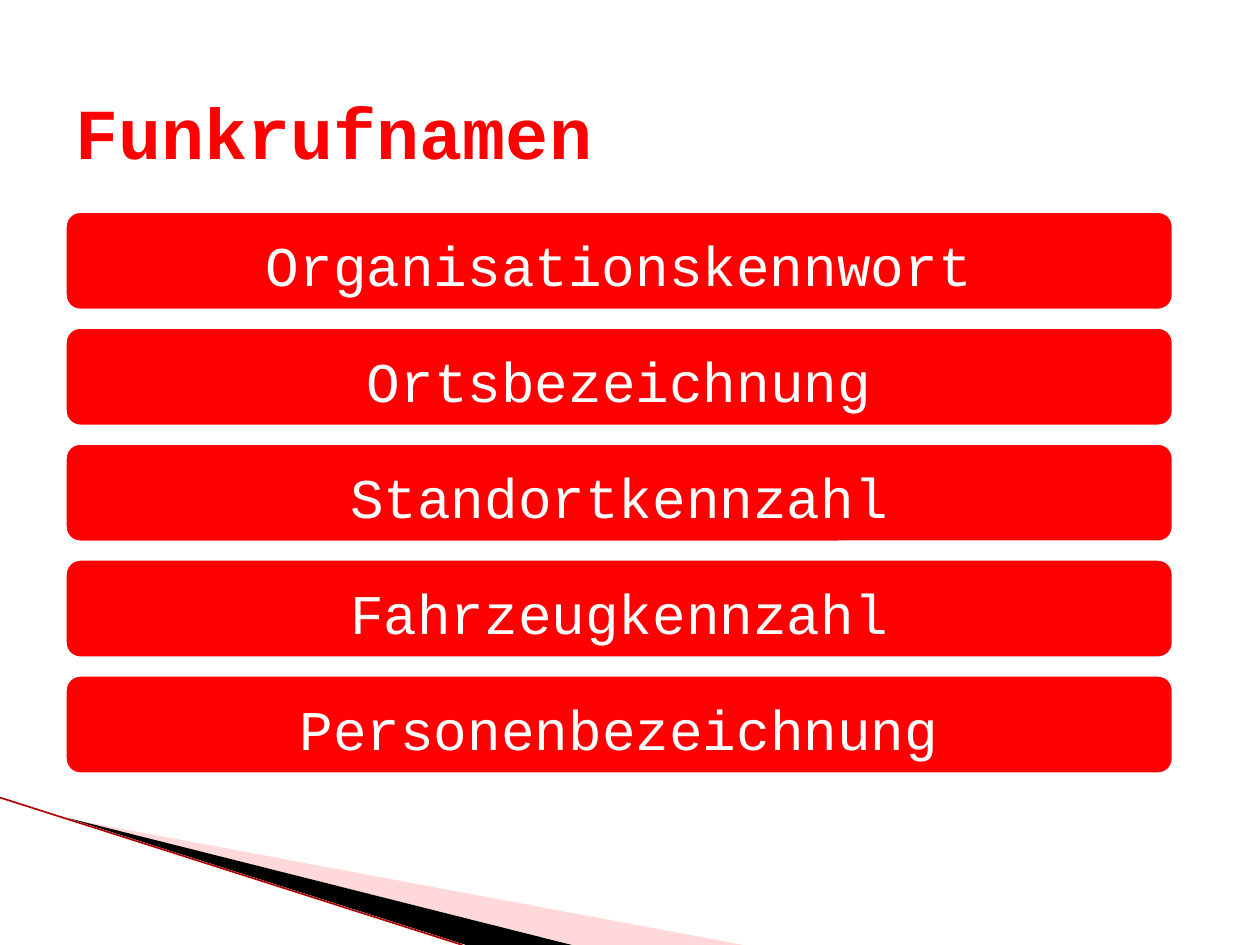
from lxml import etree
from pptx import Presentation
from pptx.dml.color import RGBColor
from pptx.enum.shapes import MSO_CONNECTOR, MSO_SHAPE
from pptx.enum.text import MSO_ANCHOR, MSO_AUTO_SIZE, PP_ALIGN
from pptx.oxml import parse_xml
from pptx.oxml.ns import nsdecls, qn
from pptx.util import Inches, Pt

RED = RGBColor(0xFF, 0x00, 0x00)
DARK = RGBColor(0xB0, 0x00, 0x00)
PINK = RGBColor(0xFF, 0xA2, 0xA2)
BLACK = RGBColor(0x00, 0x00, 0x00)
WHITE = RGBColor(0xFF, 0xFF, 0xFF)

LINE = MSO_CONNECTOR.STRAIGHT
ROUND = MSO_SHAPE.ROUNDED_RECTANGLE
MIDDLE = MSO_ANCHOR.MIDDLE
FIXED = MSO_AUTO_SIZE.NONE
LEFT, CENTER = PP_ALIGN.LEFT, PP_ALIGN.CENTER

WIDTH, HEIGHT = Inches(10), Inches(7.5)
COLS, ROWS = 100, 75
FACE = "Courier New"
HEAD = {"name": FACE, "size": Pt(41), "bold": True}
LABEL = {"name": FACE, "size": Pt(32), "bold": False}
FRAME = {"word_wrap": True, "auto_size": FIXED, "vertical_anchor": MIDDLE}
INSET = {"margin_top": Inches(0.06), "margin_bottom": 0}
GLOW = (
    f'<a:effectLst {nsdecls("a")}>'
    '<a:outerShdw blurRad="50800" dist="38100" dir="2700000" algn="tl">'
    '<a:srgbClr val="000000"><a:alpha val="50000"/></a:srgbClr>'
    '</a:outerShdw></a:effectLst>'
)
NAMES = [
    "Organisationskennwort",
    "Ortsbezeichnung",
    "Standortkennzahl",
    "Fahrzeugkennzahl",
    "Personenbezeichnung",
]


def apply(target, values):
    for key, value in values.items():
        setattr(target, key, value)


class Deck:
    def __init__(self):
        self.prs = Presentation()
        apply(self.prs, {"slide_width": WIDTH, "slide_height": HEIGHT})
        self.slide = self.prs.slides.add_slide(self.prs.slide_layouts[5])
        self.shapes = self.slide.shapes

    def spot(self, col, row):
        return round(WIDTH * col / COLS), round(HEIGHT * row / ROWS)

    def label(self, shape, text, font, color, align, frame):
        box = shape.text_frame
        apply(box, frame)
        par = box.paragraphs[0]
        par.alignment = align
        run = par.add_run()
        run.text = text
        apply(run.font, font)
        run.font.color.rgb = color
        return run

    def title(self, text, col, row, wide, high):
        shape = self.shapes.title
        left, top = self.spot(col, row)
        width, height = self.spot(wide, high)
        apply(shape, {"left": left, "top": top, "width": width, "height": height})
        run = self.label(shape, text, HEAD, RED, LEFT, FRAME)
        fill = run.font._element.find(qn("a:solidFill"))
        fill.addnext(parse_xml(GLOW))

    def bar(self, text, col, row, wide, high):
        shape = self.shapes.add_shape(ROUND, *self.spot(col, row), *self.spot(wide, high))
        shape.shadow.inherit = False
        shape.fill.solid()
        shape.fill.fore_color.rgb = RED
        shape.line.color.rgb = WHITE
        shape.line.width = Pt(4.33)
        self.label(shape, text, LABEL, WHITE, CENTER, FRAME | INSET)

    def wedge(self, points, color, alpha=100):
        start, *rest = [self.spot(*point) for point in points]
        outline = self.shapes.build_freeform(*start)
        outline.add_line_segments(rest, close=True)
        shape = outline.convert_to_shape()
        shape.shadow.inherit = False
        shape.fill.solid()
        shape.fill.fore_color.rgb = color
        shape.line.fill.background()
        if alpha < 100:
            tint = shape._element.spPr.find(qn("a:solidFill"))[0]
            etree.SubElement(tint, qn("a:alpha")).set("val", str(alpha * 1000))

    def rule(self, start, end, color):
        line = self.shapes.add_connector(LINE, *self.spot(*start), *self.spot(*end))
        line.line.color.rgb = color
        line.line.width = Pt(0.95)
        etree.SubElement(line._element.spPr, qn("a:effectLst"))


def main():
    deck = Deck()
    deck.wedge([(5.5, 65), (59, 75), (45.5, 75)], PINK, 40)
    deck.wedge([(5.3, 64.9), (45.4, 75), (37, 75)], BLACK)
    deck.rule((0, 63.3), (36.7, 75), DARK)
    for step, name in enumerate(NAMES):
        deck.bar(name, 5, 16.6 + 9.2 * step, 88.3, 8.2)
    deck.title("Funkrufnamen", 5, 5.2, 90, 10.3)
    deck.prs.save("out.pptx")


if __name__ == "__main__":
    main()
